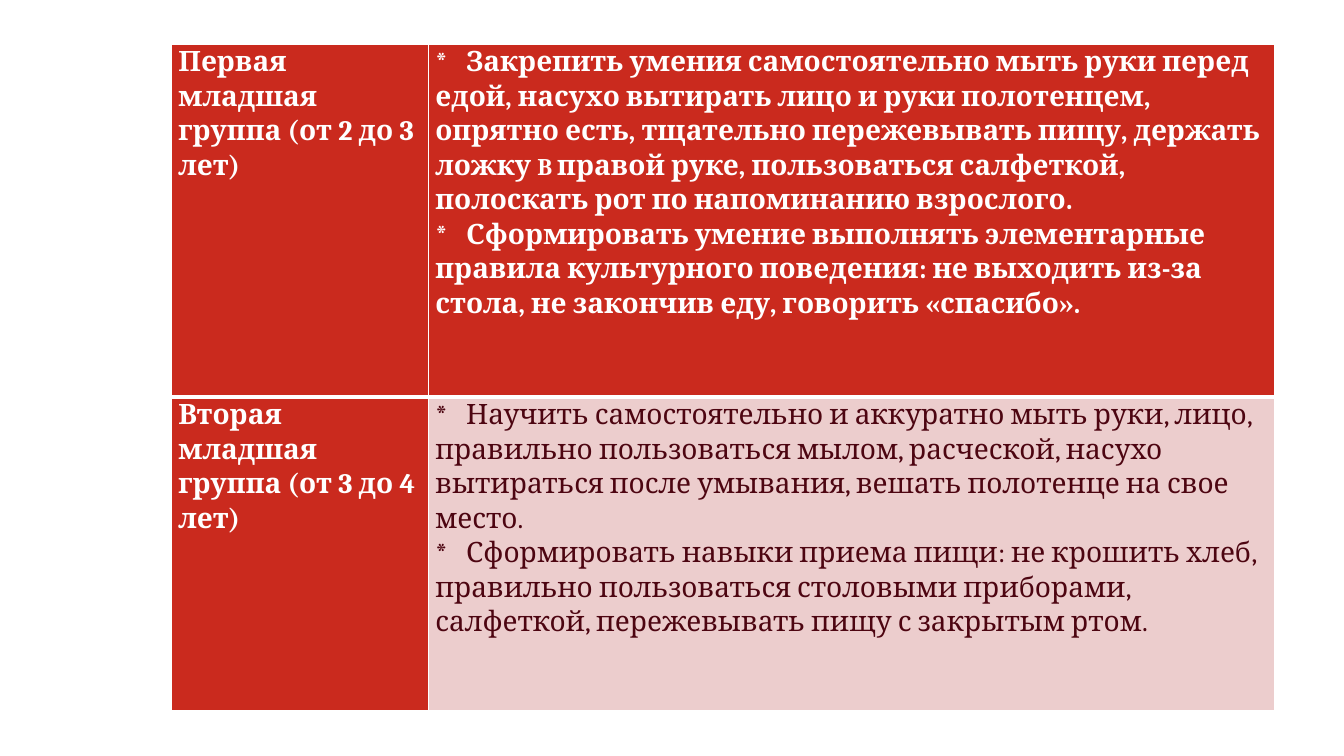
from pptx import Presentation
from pptx.dml.color import RGBColor as Rgb
from pptx.oxml.ns import qn
from pptx.util import Pt
from lxml.etree import SubElement as Sub

HUES = {"red": "CA2A1E", "pink": "ECCDCD", "white": "FFFFFF", "wine": "4D0511"}
COLS = (183.6, 604.8)
ROWS = (252, 224)
TASKS = (
    (
        ["Первая младшая группа (от 2 до 3 лет)"],
        [
            (
                "*\tЗакрепить умения самостоятельно мыть руки перед едой, насухо вытирать лицо и руки полотенцем, опрятно есть, тщательно пережевывать пищу, держать ложку ",
                "в ",
                "правой руке, пользоваться салфеткой, полоскать рот по напоминанию взрослого.",
            ),
            "*\tСформировать умение выполнять элементарные правила культурного поведения: не выходить из-за стола, не закончив еду, говорить «спасибо».",
        ],
    ),
    (
        ["Вторая младшая группа (от 3 до 4 лет)"],
        [
            "*\tНаучить самостоятельно и аккуратно мыть руки, лицо, правильно пользоваться мылом, расческой, насухо вытираться после умывания, вешать полотенце на свое место.",
            "*\tСформировать навыки приема пищи: не крошить хлеб, правильно пользоваться столовыми приборами, салфеткой, пережевывать пищу с закрытым ртом.",
        ],
    ),
)


def write(para, text, hue="white", bold=True, small=False, size=20, face="Cambria"):
    run = para.add_run()
    run.text = text
    font = run.font
    font.name, font.size, font.bold = face, Pt(size), bold
    font.color.rgb = Rgb.from_string(HUES[hue])
    if small:
        font._element.set("cap", "small")


class Page:
    def __init__(self, deck):
        self.slide = deck.slides.add_slide(deck.slide_layouts[6])
        self.lead = 1.07
        self.inset = 5
        self.stop = 22

    def table(self, left, top, cols, rows):
        frame = self.slide.shapes.add_table(
            len(rows), len(cols), Pt(left), Pt(top), Pt(sum(cols)), Pt(sum(rows)))
        grid = frame.table
        for col, width in zip(grid.columns, cols):
            col.width = Pt(width)
        for row, height in zip(grid.rows, rows):
            row.height = Pt(height)
        return grid

    def edges(self, cell, **widths):
        props = cell._tc.get_or_add_tcPr()
        for side in "LRTB":
            line = Sub(props, qn("a:ln" + side), w=str(Pt(widths.get(side, 1))))
            fill = Sub(line, qn("a:solidFill"))
            Sub(fill, qn("a:srgbClr"), val=HUES["white"])

    def tab(self, para):
        stops = Sub(para._p.get_or_add_pPr(), qn("a:tabLst"))
        Sub(stops, qn("a:tab"), pos=str(Pt(self.stop)), algn="l")

    def cell(self, cell, items, fill, **style):
        cell.margin_left = cell.margin_right = Pt(self.inset)
        cell.margin_top = cell.margin_bottom = 0
        cell.fill.solid()
        cell.fill.fore_color.rgb = Rgb.from_string(HUES[fill])
        frame = cell.text_frame
        for i, item in enumerate(items):
            para = frame.add_paragraph() if i else frame.paragraphs[0]
            para.line_spacing = self.lead
            parts = (item,) if isinstance(item, str) else item
            if "\t" in parts[0]:
                self.tab(para)
            for j, part in enumerate(parts):
                write(para, part, small=j == 1, **style)


def main():
    deck = Presentation()
    deck.slide_width, deck.slide_height = Pt(960), Pt(540)
    page = Page(deck)
    grid = page.table(122.4, 31.7, COLS, ROWS)
    for r, row in enumerate(TASKS):
        for c, items in enumerate(row):
            cell = grid.cell(r, c)
            page.edges(cell, **{"TB"[1 - r]: 3})
            plain = r == 1 and c == 1
            page.cell(cell, items, "pink" if plain else "red",
                      hue="wine" if plain else "white", bold=not plain)
    deck.save("out.pptx")


if __name__ == "__main__":
    main()
